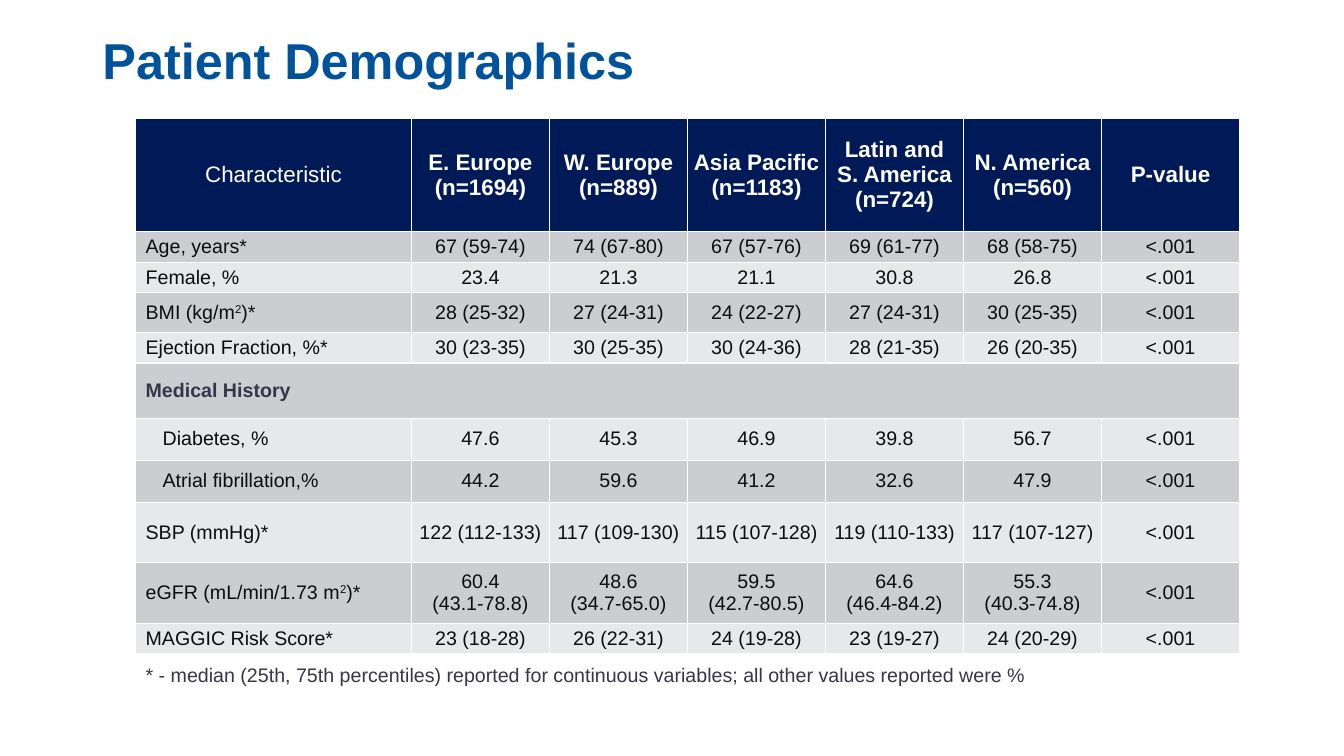
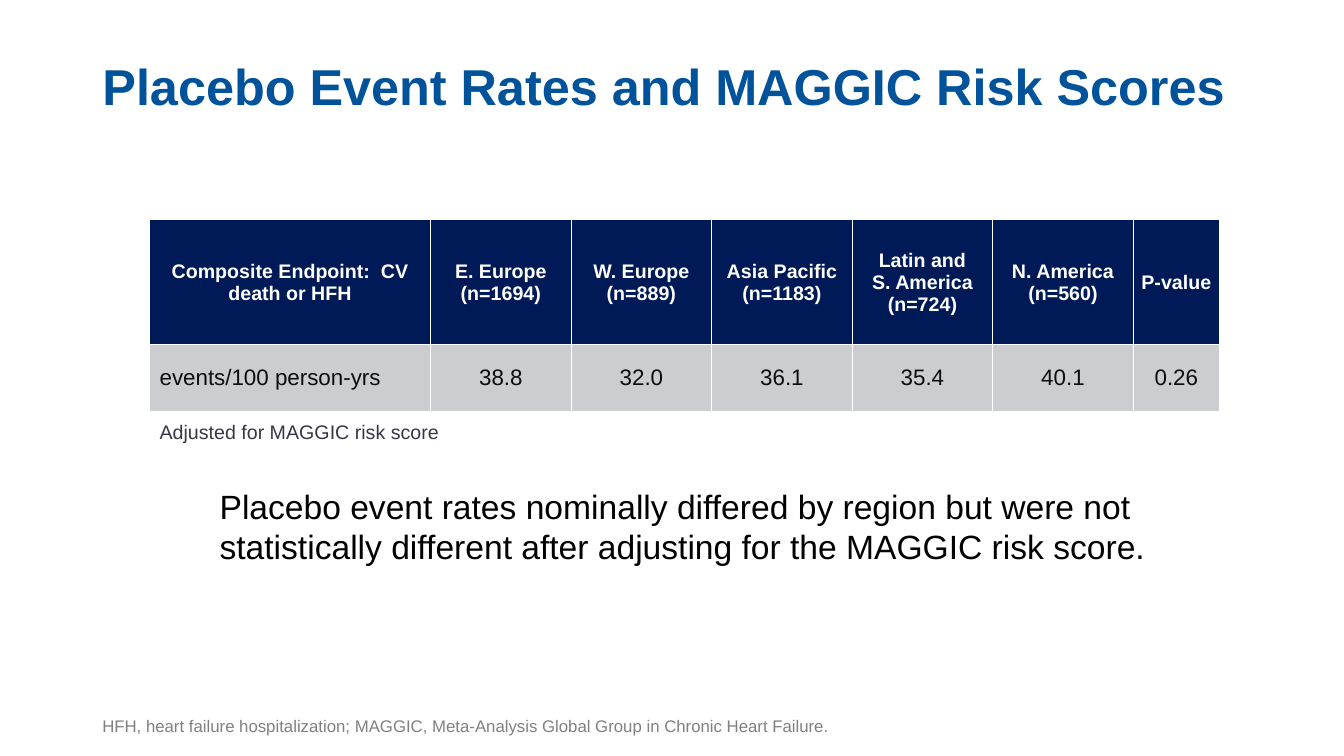
import pptx
import pptx.dml.color
import pptx.enum.text
import pptx.util

Pt = pptx.util.Pt
ALIGN = pptx.enum.text.PP_ALIGN
ANCHOR = pptx.enum.text.MSO_ANCHOR
AUTO_SIZE = pptx.enum.text.MSO_AUTO_SIZE

COLORS = {
    "title": "00539B",
    "header": "001A57",
    "header_text": "FFFFFF",
    "dark_band": "CCCDD1",
    "light_band": "E7E8EA",
    "cell_text": "0D0D0D",
    "note_text": "373648",
    "statement": "000000",
    "footnote": "808080",
    "page": "FFFFFF",
}
REGIONS = [
    "E. Europe\n(n=1694)",
    "W. Europe\n(n=889)",
    "Asia Pacific\n(n=1183)",
    "Latin and\nS. America\n(n=724)",
    "N. America\n(n=560)",
]


def write(text_frame, text, size, color, bold=False, align=ALIGN.LEFT, line_spacing=None):
    """Fill the first paragraph; \\n breaks the line and ^ switches superscript on and off."""
    paragraph = text_frame.paragraphs[0]
    paragraph.alignment = align
    paragraph.line_spacing = line_spacing
    for line_number, line in enumerate(text.split("\n")):
        if line_number:
            paragraph.add_line_break()
        for part_number, part in enumerate(line.split("^")):
            run = paragraph.add_run()
            run.text = part
            run.font.name = "Arial"
            run.font.size = Pt(size)
            run.font.bold = bold
            run.font.color.rgb = pptx.dml.color.RGBColor.from_string(COLORS[color])
            if part_number % 2:
                run.font._element.set("baseline", "30000")


def add_grid(slide, left, top, widths, rows, header_size, body_size, plain_corner=False):
    """Rows are (height, texts); a single text spans the row, and the last row is a note."""
    heights = [height for height, texts in rows]
    table = slide.shapes.add_table(
        len(rows), len(widths), Pt(left), Pt(top), Pt(sum(widths)), Pt(sum(heights))
    ).table
    table.horz_banding = False
    for column, width in zip(table.columns, widths):
        column.width = Pt(width)

    for row_number, (height, texts) in enumerate(rows):
        table.rows[row_number].height = Pt(height)
        is_header = row_number == 0
        is_note = row_number == len(rows) - 1
        if is_header:
            fill = "header"
        elif is_note:
            fill = "page"
        else:
            fill = "dark_band" if row_number % 2 else "light_band"
        spans = len(texts) == 1
        if spans:
            table.cell(row_number, 0).merge(table.cell(row_number, len(widths) - 1))

        for column_number, text in enumerate(texts):
            cell = table.cell(row_number, column_number)
            is_label = column_number == 0 and not is_header
            cell.vertical_anchor = ANCHOR.MIDDLE
            cell.margin_left = Pt(7.2 if is_label else 0.7)
            if text in INDENTED:
                cell.margin_left = Pt(19.4)
            cell.margin_right = Pt(0.7)
            cell.margin_top = cell.margin_bottom = Pt(0)
            cell.fill.solid()
            cell.fill.fore_color.rgb = pptx.dml.color.RGBColor.from_string(COLORS[fill])
            if is_header:
                size, color = header_size, "header_text"
                bold = column_number > 0 or not plain_corner
            else:
                size = 14 if is_note else body_size
                color = "note_text" if spans else "cell_text"
                bold = spans and not is_note
            write(cell.text_frame, text, size=size, color=color, bold=bold,
                  align=ALIGN.LEFT if is_label else ALIGN.CENTER)


presentation = pptx.Presentation()
presentation.slide_width = Pt(960)
presentation.slide_height = Pt(540)

# Titles
slides = []
for title_text, title_height in [
    ("Patient Demographics", 68.4),
    ("Placebo Event Rates and MAGGIC Risk Scores", 87.1),
]:
    slide = presentation.slides.add_slide(presentation.slide_layouts[5])
    title = slide.shapes.title
    title.left, title.top, title.width, title.height = Pt(66), Pt(0), Pt(828), Pt(title_height)
    title.text_frame.vertical_anchor = ANCHOR.BOTTOM
    title.text_frame.auto_size = AUTO_SIZE.NONE
    write(title.text_frame, title_text, size=36, color="title", bold=True, line_spacing=0.9)
    slides.append(slide)
demographics_slide, event_rates_slide = slides

# Patient demographics
INDENTED = ["Diabetes, %", "Atrial fibrillation,%"]
measures = [
    (21.7, "Age, years*", ["67 (59-74)", "74 (67-80)", "67 (57-76)", "69 (61-77)", "68 (58-75)"]),
    (21.7, "Female, %", ["23.4", "21.3", "21.1", "30.8", "26.8"]),
    (28.7, "BMI (kg/m^2^)*",
     ["28 (25-32)", "27 (24-31)", "24 (22-27)", "27 (24-31)", "30 (25-35)"]),
    (21.7, "Ejection Fraction, %*",
     ["30 (23-35)", "30 (25-35)", "30 (24-36)", "28 (21-35)", "26 (20-35)"]),
    (39.4, "Medical History", []),
    (30, "Diabetes, %", ["47.6", "45.3", "46.9", "39.8", "56.7"]),
    (30, "Atrial fibrillation,%", ["44.2", "59.6", "41.2", "32.6", "47.9"]),
    (43.2, "SBP (mmHg)*",
     ["122 (112-133)", "117 (109-130)", "115 (107-128)", "119 (110-133)", "117 (107-127)"]),
    (43.2, "eGFR (mL/min/1.73 m^2^)*",
     ["60.4\n(43.1-78.8)", "48.6\n(34.7-65.0)", "59.5\n(42.7-80.5)", "64.6\n(46.4-84.2)",
      "55.3\n(40.3-74.8)"]),
    (21.7, "MAGGIC Risk Score*",
     ["23 (18-28)", "26 (22-31)", "24 (19-28)", "23 (19-27)", "24 (20-29)"]),
]
demographics_rows = [(81.2, ["Characteristic", *REGIONS, "P-value"])]
for height, label, values in measures:
    p_value = ["<.001"] if values else []
    demographics_rows.append((height, [label, *values, *p_value]))
demographics_rows.append((32.4, [
    "* - median (25th, 75th percentiles) reported for continuous variables; "
    "all other values reported were %"
]))
add_grid(demographics_slide, 96.8, 84.4, [197.1] + [98.6] * 6, demographics_rows,
         header_size=16, body_size=14, plain_corner=True)

# Placebo event rates
event_rates_rows = [
    (89.2, ["Composite Endpoint:  CV death or HFH", *REGIONS, "P-value"]),
    (48, ["events/100 person-yrs", "38.8", "32.0", "36.1", "35.4", "40.1", "0.26"]),
    (29.6, ["Adjusted for MAGGIC risk score"]),
]
add_grid(event_rates_slide, 106.8, 157, [200.8] + [100.4] * 5 + [61.6], event_rates_rows,
         header_size=14, body_size=16)

statement = event_rates_slide.shapes.add_textbox(Pt(149.8), Pt(343.4), Pt(679.7), Pt(65.5))
statement.text_frame.word_wrap = True
statement.text_frame.auto_size = AUTO_SIZE.SHAPE_TO_FIT_TEXT
write(statement.text_frame,
      "Placebo event rates nominally differed by region but were not statistically different "
      "after adjusting for the MAGGIC risk score.", size=24, color="statement")

footnote = event_rates_slide.shapes.add_textbox(Pt(66), Pt(500.4), Pt(700.6), Pt(28.8))
footnote.text_frame.word_wrap = True
footnote.text_frame.vertical_anchor = ANCHOR.BOTTOM
write(footnote.text_frame,
      "HFH, heart failure hospitalization; MAGGIC, Meta-Analysis Global Group in Chronic "
      "Heart Failure.", size=12, color="footnote")

presentation.save("out.pptx")
